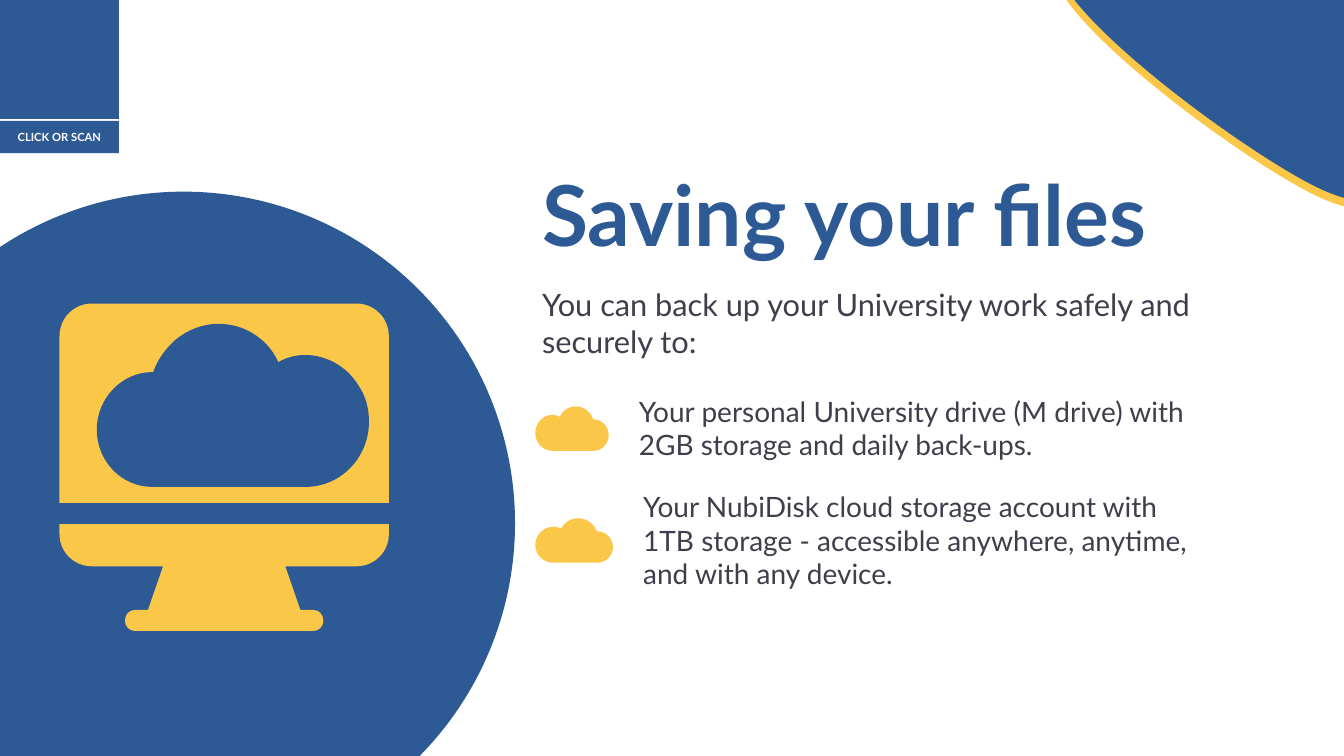
"""Build the slide about saving files to University and cloud storage."""
from pptx import Presentation
from pptx import util as u
from pptx.dml.color import RGBColor
from pptx.enum import shapes, text
from pptx.oxml import ns, xmlchemy

BLUE = RGBColor(0x2D, 0x5A, 0x95)
YELLOW = RGBColor(0xFA, 0xC7, 0x48)
INK = RGBColor(0x3E, 0x3E, 0x4D)
WHITE = RGBColor(0xFF, 0xFF, 0xFF)

TITLE_FORMAT = {"size": u.Pt(60), "bold": True, "color": BLUE}
LEAD_FORMAT = {"size": u.Pt(22), "color": INK}
ITEM_FORMAT = {"size": u.Pt(20), "color": INK}
BADGE_FORMAT = {"size": u.Pt(8), "bold": True, "color": WHITE}

TEXTS = [
    ((13.41, 3.96, 19.63, 2.82), TITLE_FORMAT, ["Saving your files"]),
    ((13.41, 7.08, 17.7, 2.13), LEAD_FORMAT,
     ["You can back up your University work safely and securely to:"]),
    ((15.85, 9.81, 14.94, 1.96), ITEM_FORMAT,
     ["Your personal University drive (M drive) with",
      "2GB storage and daily back-ups."]),
    ((15.96, 12.21, 14.83, 3.68), ITEM_FORMAT,
     ["Your NubiDisk cloud storage account with",
      "1TB storage - accessible anywhere, anytime,",
      "and with any device."]),
]

BADGE_SQUARE = (0, 0, 3, 3)
BADGE_LABEL = (0, 3.05, 3, 0.81)
CIRCLE = (-3.73, 4.83, 16.71, 16.71)

MONITOR_AXIS = 5.65
SCREEN_HALF = [(2.31, 7.65), (1.88, 7.65, 1.5, 8, 1.5, 8.48), (1.5, 12.67)]
STAND_HALF = [
    (1.5, 13.21), (1.5, 13.46), (1.5, 13.92, 1.88, 14.27, 2.31, 14.27),
    (4.11, 14.27), (3.73, 15.37), (3.4, 15.37),
    (3.25, 15.37, 3.15, 15.49, 3.15, 15.65), (3.15, 15.8, 3.28, 15.9, 3.4, 15.9),
]

CLOUD_SIZE = (2.7, 1.62)
CLOUD = [
    (1.21, 0), (1.05, 0, 0.9, 0.06, 0.78, 0.16), (0.68, 0.25, 0.6, 0.36, 0.56, 0.48),
    (0.55, 0.48), (0.25, 0.48, 0, 0.74, 0, 1.05), (0, 1.37, 0.25, 1.62, 0.55, 1.62),
    (2.07, 1.62), (2.42, 1.62, 2.7, 1.33, 2.7, 0.97), (2.7, 0.85, 2.67, 0.72, 2.6, 0.62),
    (2.54, 0.52, 2.46, 0.44, 2.35, 0.38), (2.27, 0.34, 2.17, 0.31, 2.07, 0.31),
    (1.98, 0.31, 1.89, 0.33, 1.8, 0.38), (1.72, 0.2, 1.56, 0.07, 1.37, 0.02),
    (1.32, 0.01, 1.26, 0, 1.21, 0),
]
CLOUDS = [
    ((2.44, 8.16, 6.86, 4.11), BLUE, False),
    ((13.49, 10.24, 1.85, 1.12), YELLOW, True),
    ((13.49, 13.06, 1.96, 1.12), YELLOW, True),
]

CORNER = [
    (33.43, 5.05), (31.78, 4.39, 26.39, 0.48, 26.52, -0.86),
    (26.67, -2.21, 33.17, -5.54, 34.29, -3.05), (35.69, 3.38, 36.47, 0.97, 36.55, 3.05),
    (36.63, 5.16, 35.1, 5.72, 33.43, 5.05),
]
CORNER_LAYERS = [((0, 0), YELLOW), ((0.05, -0.2), BLUE)]


def place(path, left, top, across=1, down=1):
    """Scale a path and move it."""
    return [tuple(top + value * down if index % 2 else left + value * across
                  for index, value in enumerate(step)) for step in path]


def backwards(path):
    """Return the path drawn from its end to its start."""
    result = [path[-1][-2:]]
    for previous, step in zip(path[-2::-1], path[:0:-1]):
        controls = step[2:4] + step[:2] if len(step) == 6 else ()
        result.append(controls + previous[-2:])
    return result


def paint(shape, color):
    """Give a shape a flat fill without line or shadow."""
    shape.shadow.inherit = False
    shape.fill.solid()
    shape.fill.fore_color.rgb = color
    shape.line.fill.background()
    return shape


def add_outline(slide, path, color):
    """Draw a closed outline of lines and cubic curves given in centimetres."""
    points = [(u.Cm(step[i]), u.Cm(step[i + 1]))
              for step in path for i in range(0, len(step), 2)]
    builder = slide.shapes.build_freeform(*points[0])
    builder.add_line_segments(points[1:], close=True)
    shape = paint(builder.convert_to_shape(), color)
    lines = iter(shape.element.findall(".//" + ns.qn("a:lnTo")))
    for step in path[1:]:
        line = next(lines)
        if len(step) == 6:
            curve = xmlchemy.OxmlElement("a:cubicBezTo")
            line.addprevious(curve)
            for segment in (line, next(lines), next(lines)):
                curve.append(segment[0])
                segment.getparent().remove(segment)


def add_preset(slide, preset, box, color):
    """Draw a flat preset shape."""
    return paint(slide.shapes.add_shape(preset, *map(u.Cm, box)), color)


def write(frame, lines, values, alignment=text.PP_ALIGN.LEFT):
    """Fill a text frame with one paragraph a line."""
    frame.word_wrap = True
    for index, line in enumerate(lines):
        paragraph = frame.add_paragraph() if index else frame.paragraphs[0]
        paragraph.alignment = alignment
        run = paragraph.add_run()
        run.text = line
        run.font.name = "Lato"
        for name, value in values.items():
            if name == "color":
                run.font.color.rgb = value
            else:
                setattr(run.font, name, value)


def main():
    """Compose and save the slide."""
    presentation = Presentation()
    presentation.slide_width, presentation.slide_height = u.Cm(33.87), u.Cm(19.05)
    slide = presentation.slides.add_slide(presentation.slide_layouts[6])

    for box, values, lines in TEXTS:
        write(slide.shapes.add_textbox(*map(u.Cm, box)).text_frame, lines, values)

    add_preset(slide, shapes.MSO_SHAPE.RECTANGLE, BADGE_SQUARE, BLUE)
    label = add_preset(slide, shapes.MSO_SHAPE.RECTANGLE, BADGE_LABEL, BLUE)
    label.text_frame.vertical_anchor = text.MSO_ANCHOR.MIDDLE
    write(label.text_frame, ["CLICK OR SCAN"], BADGE_FORMAT, text.PP_ALIGN.CENTER)
    add_preset(slide, shapes.MSO_SHAPE.OVAL, CIRCLE, BLUE)

    for half in (STAND_HALF, SCREEN_HALF):
        mirrored_half = place(backwards(half), 2 * MONITOR_AXIS, 0, across=-1)
        add_outline(slide, half + mirrored_half, YELLOW)

    for (left, top, width, height), color, mirrored in CLOUDS:
        across, down = width / CLOUD_SIZE[0], height / CLOUD_SIZE[1]
        if mirrored:
            left, across = left + width, -across
        add_outline(slide, place(CLOUD, left, top, across, down), color)

    for offset, color in CORNER_LAYERS:
        add_outline(slide, place(CORNER, *offset), color)

    presentation.save("out.pptx")


if __name__ == "__main__":
    main()
